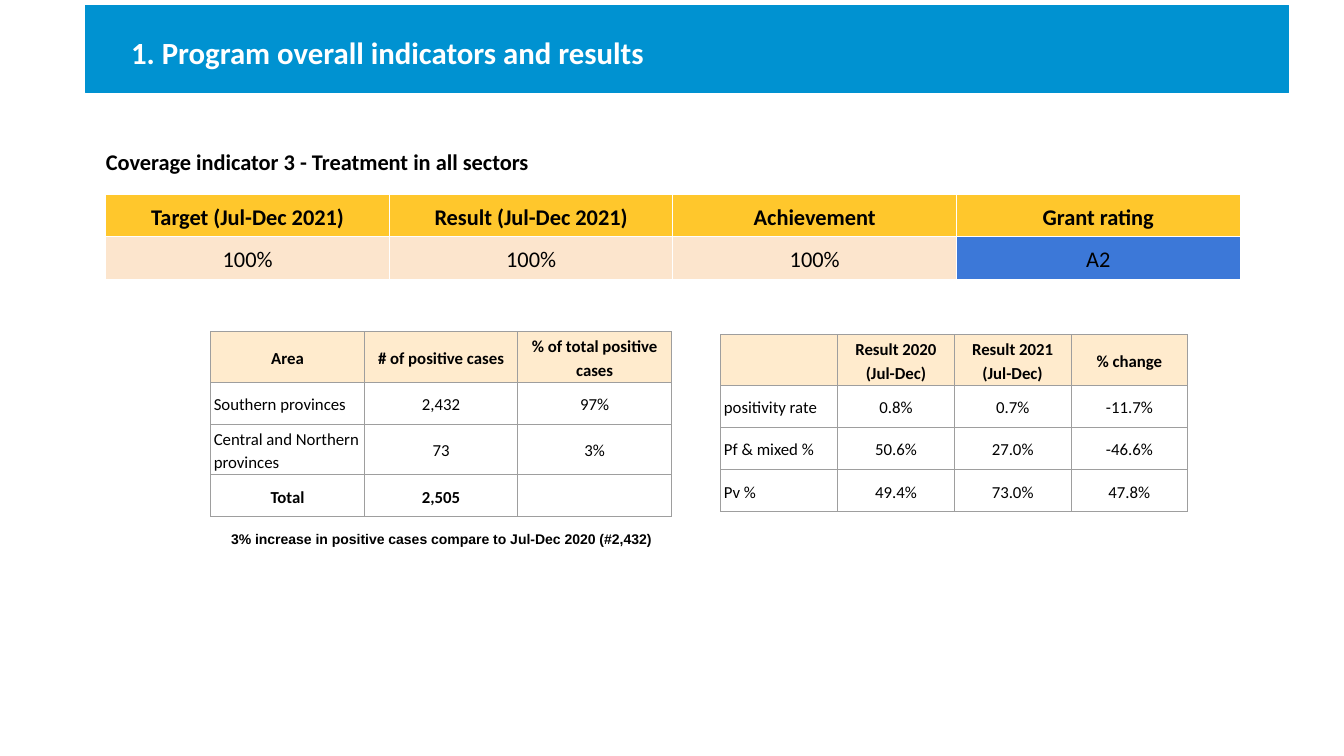
from lxml.etree import SubElement
from pptx import Presentation
from pptx.dml.color import RGBColor
from pptx.enum.text import MSO_ANCHOR, MSO_AUTO_SIZE, PP_ALIGN
from pptx.oxml.ns import qn
from pptx.util import Inches, Pt

COLORS = {
    "black": "000000",
    "white": "FFFFFF",
    "banner": "0092D1",
    "gold": "FFC72C",
    "peach": "FCE5CD",
    "rating": "3C78D8",
    "cream": "FFEBCD",
    "grid": "9E9E9E",
}

SUMMARY = [
    ["Target (Jul-Dec 2021)", "Result (Jul-Dec 2021)", "Achievement", "Grant rating"],
    ["100%", "100%", "100%", "A2"],
]
AREAS = [
    ["Area", "# of positive cases", "% of total positive cases"],
    ["Southern provinces", "2,432", "97%"],
    ["Central and Northern provinces", "73", "3%"],
    ["Total", "2,505", ""],
]
CHANGES = [
    ["", "Result 2020\n(Jul-Dec)", "Result 2021\n(Jul-Dec)", "% change"],
    ["positivity rate", "0.8%", "0.7%", "-11.7%"],
    ["Pf & mixed %", "50.6%", "27.0%", "-46.6%"],
    ["Pv %", "49.4%", "73.0%", "47.8%"],
]


def color(name):
    return RGBColor.from_string(COLORS[name])


def write_text(frame, text, *, size, font="Calibri", ink="black", bold=False,
               align=PP_ALIGN.LEFT, spacing=1.0):
    for index, line in enumerate(text.split("\n")):
        para = frame.paragraphs[0] if index == 0 else frame.add_paragraph()
        para.alignment = align
        para.line_spacing = spacing
        if line:
            span = para.add_run()
            span.text = line
            span.font.name = font
            span.font.size = Pt(size)
            span.font.bold = bold
            span.font.color.rgb = color(ink)


def set_insets(frame, left, top, right, bottom):
    frame.margin_left, frame.margin_top = Inches(left), Inches(top)
    frame.margin_right, frame.margin_bottom = Inches(right), Inches(bottom)
    frame.word_wrap = True


def add_title(page, text):
    title = page.shapes.title
    title.left, title.top = Inches(0.85), Inches(0.05)
    title.width, title.height = Inches(11.93), Inches(0.87)
    title.fill.solid()
    title.fill.fore_color.rgb = color("banner")
    title.line.color.rgb = color("banner")
    title.line.width = Pt(0.75)
    frame = title.text_frame
    set_insets(frame, 0.45, 0, 0, 0)
    frame.auto_size = MSO_AUTO_SIZE.NONE
    frame.vertical_anchor = MSO_ANCHOR.MIDDLE
    write_text(frame, text, size=22, ink="white", bold=True, spacing=1.2)


def add_label(page, text, left, top, width, height, inset, **style):
    box = page.shapes.add_textbox(Inches(left), Inches(top), Inches(width), Inches(height))
    set_insets(box.text_frame, inset, inset, inset, inset)
    write_text(box.text_frame, text, **style)


def set_borders(cell, name):
    properties = cell._tc.get_or_add_tcPr()
    for side in ("a:lnL", "a:lnR", "a:lnT", "a:lnB"):
        line = SubElement(properties, qn(side), w=str(Pt(0.83)))
        fill = SubElement(line, qn("a:solidFill"))
        SubElement(fill, qn("a:srgbClr"), val=COLORS[name])


def fill_cell(cell, name):
    if name is None:
        cell.fill.background()
    else:
        cell.fill.solid()
        cell.fill.fore_color.rgb = color(name)


def add_grid(page, rows, left, top, width, heights, *, size, header, body, border,
             first_align=PP_ALIGN.LEFT, bold_rows=(0,)):
    columns = len(rows[0])
    table = page.shapes.add_table(len(rows), columns, Inches(left), Inches(top),
                                  Inches(width), Inches(sum(heights))).table
    table.first_row = table.horz_banding = False
    for column in table.columns:
        column.width = Inches(width / columns)
    for row, height in zip(table.rows, heights):
        row.height = Inches(height)
    for i, values in enumerate(rows):
        for j, text in enumerate(values):
            cell = table.cell(i, j)
            cell.margin_left = cell.margin_right = Inches(0.03)
            cell.margin_top = cell.margin_bottom = Inches(0.02)
            cell.vertical_anchor = MSO_ANCHOR.MIDDLE
            bold = i in bold_rows
            align = PP_ALIGN.CENTER if bold or j else first_align
            write_text(cell.text_frame, text, size=size, bold=bold, align=align, spacing=1.15)
            set_borders(cell, border)
            fill_cell(cell, body if i else header)
    return table


def main():
    deck = Presentation()
    deck.slide_width, deck.slide_height = Inches(13.33), Inches(7.5)
    page = deck.slides.add_slide(deck.slide_layouts[5])

    add_label(page, "Coverage indicator 3 - Treatment in all sectors",
              1.05, 1.39, 11.93, 0.45, 0, size=16, bold=True, spacing=1.3)
    add_title(page, "1. Program overall indicators and results")
    summary = add_grid(page, SUMMARY, 1.05, 1.93, 11.25, [0.42, 0.42], size=16,
                       header="gold", body="peach", border="white",
                       first_align=PP_ALIGN.CENTER)
    fill_cell(summary.cell(1, 3), "rating")
    add_grid(page, AREAS, 2.09, 3.29, 4.57, [0.47, 0.42, 0.47, 0.42], size=12,
             header="cream", body=None, border="grid", bold_rows=(0, 3))
    add_label(page, "3% increase in positive cases compare to Jul-Dec 2020 (#2,432)",
              2.09, 5.18, 4.57, 0.37, 0.1, size=10, font="Arial", bold=True,
              align=PP_ALIGN.CENTER)
    add_grid(page, CHANGES, 7.15, 3.32, 4.63, [0.47, 0.42, 0.42, 0.42], size=12,
             header="cream", body="white", border="grid")

    deck.save("out.pptx")


if __name__ == "__main__":
    main()
